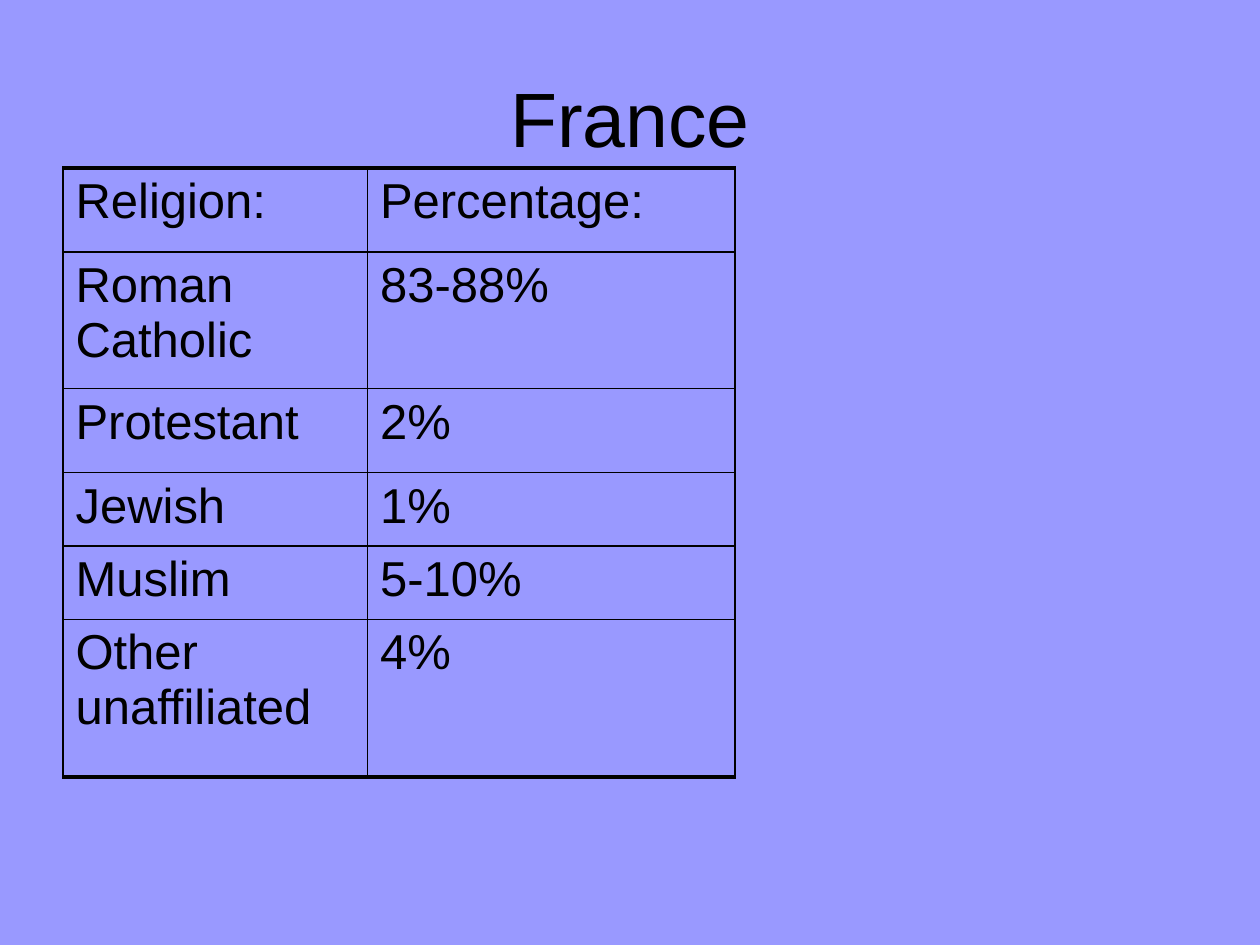
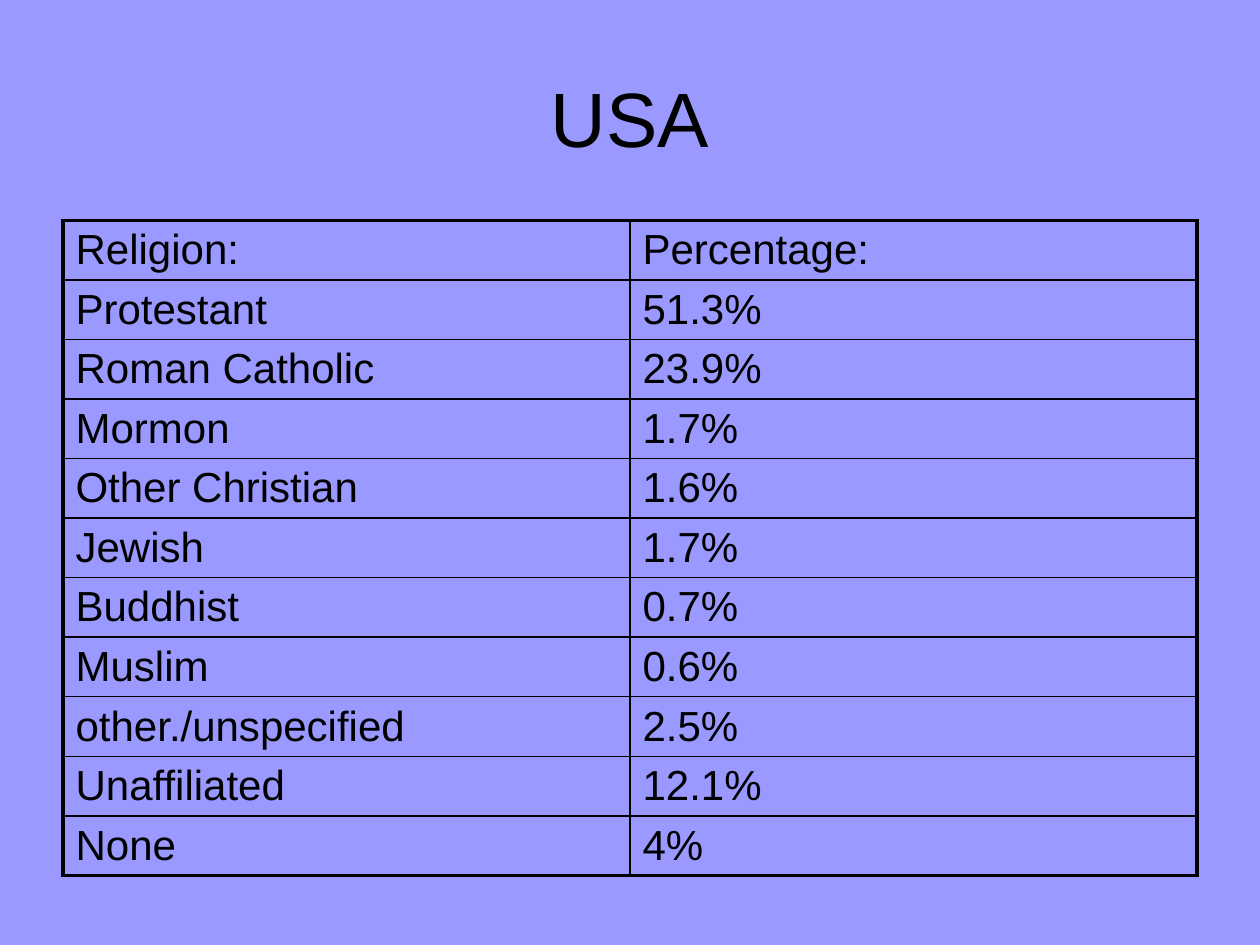
from lxml.etree import SubElement
from pptx import Presentation
from pptx.dml.color import RGBColor
from pptx.enum.text import MSO_ANCHOR, PP_ALIGN
from pptx.oxml.ns import qn
from pptx.util import Inches, Pt

BACK = RGBColor(0x99, 0x99, 0xFF)
INK = RGBColor(0, 0, 0)
FONT = "Arial"
UNIT = Inches(1) / 12
THIN, THICK = Pt(1), Pt(2.25)
HEAD = ("Religion:", "Percentage:")
FRANCE = [
    HEAD,
    ("Roman Catholic", "83-88%"),
    ("Protestant", "2%"),
    ("Jewish", "1%"),
    ("Muslim", "5-10%"),
    ("Other unaffiliated", "4%"),
]
USA = [
    HEAD,
    ("Protestant", "51.3%"),
    ("Roman Catholic", "23.9%"),
    ("Mormon", "1.7%"),
    ("Other Christian", "1.6%"),
    ("Jewish", "1.7%"),
    ("Buddhist", "0.7%"),
    ("Muslim", "0.6%"),
    ("other./unspecified", "2.5%"),
    ("Unaffiliated", "12.1%"),
    ("None", "4%"),
]


def span(count):
    return round(count * UNIT)


class Deck:
    """Holds the shared style and the current slide, on a grid of 12 units to the inch."""

    def __init__(self):
        self.show = Presentation()
        self.show.slide_width = span(120)
        self.show.slide_height = span(90)
        fill = self.show.slide_master.background.fill
        fill.solid()
        fill.fore_color.rgb = BACK
        self.slide = None

    def page(self, name):
        self.slide = self.show.slides.add_slide(self.show.slide_layouts[5])
        title = self.slide.shapes.title
        title.left, title.top, title.width, title.height = map(span, (6, 3.6, 108, 15))
        frame = title.text_frame
        frame.text = name
        frame.vertical_anchor = MSO_ANCHOR.MIDDLE
        frame.paragraphs[0].alignment = PP_ALIGN.CENTER
        self.style(frame.paragraphs[0], 44)

    def style(self, para, size):
        for run in para.runs:
            run.font.name = FONT
            run.font.size = Pt(size)
            run.font.color.rgb = INK

    def edge(self, cell, sides):
        props = cell._tc.get_or_add_tcPr()
        for side, width in sides.items():
            line = SubElement(props, qn(f"a:ln{side}"), w=str(width))
            solid = SubElement(line, qn("a:solidFill"))
            SubElement(solid, qn("a:srgbClr"), val=str(INK))

    def cell(self, cell, text, size, sides):
        cell.text_frame.text = text
        para = cell.text_frame.paragraphs[0]
        space = SubElement(para._p.get_or_add_pPr(), qn("a:spcBef"))
        SubElement(space, qn("a:spcPct"), val="20000")
        self.style(para, size)
        self.edge(cell, sides)
        cell.fill.background()

    def table(self, data, top, cols, rows, high, size, side):
        shape = self.slide.shapes.add_table(
            len(rows), len(cols), span(6), span(top), span(sum(cols)), span(high))
        table = shape.table
        table.first_row = table.horz_banding = False
        for col, width in zip(table.columns, cols):
            col.width = span(width)
        for row, height in zip(table.rows, rows):
            row.height = span(height)
        shape.height = span(high)
        for r, line in enumerate(data):
            for c, text in enumerate(line):
                sides = {
                    "L": side if c == 0 else THIN,
                    "R": side if c == len(cols) - 1 else THIN,
                    "T": THICK if r == 0 else THIN,
                    "B": THICK if r == len(rows) - 1 else THIN,
                }
                self.cell(table.cell(r, c), text, size, sides)


def main():
    deck = Deck()
    deck.page("France")
    deck.table(FRANCE, 16, (29, 35), (8, 13, 8, 7, 7, 15), 58, 28, THIN)
    deck.page("USA")
    deck.table(USA, 21, (54, 54), [5.67] * len(USA), 66, 24, THICK)
    deck.show.save("out.pptx")


if __name__ == "__main__":
    main()
